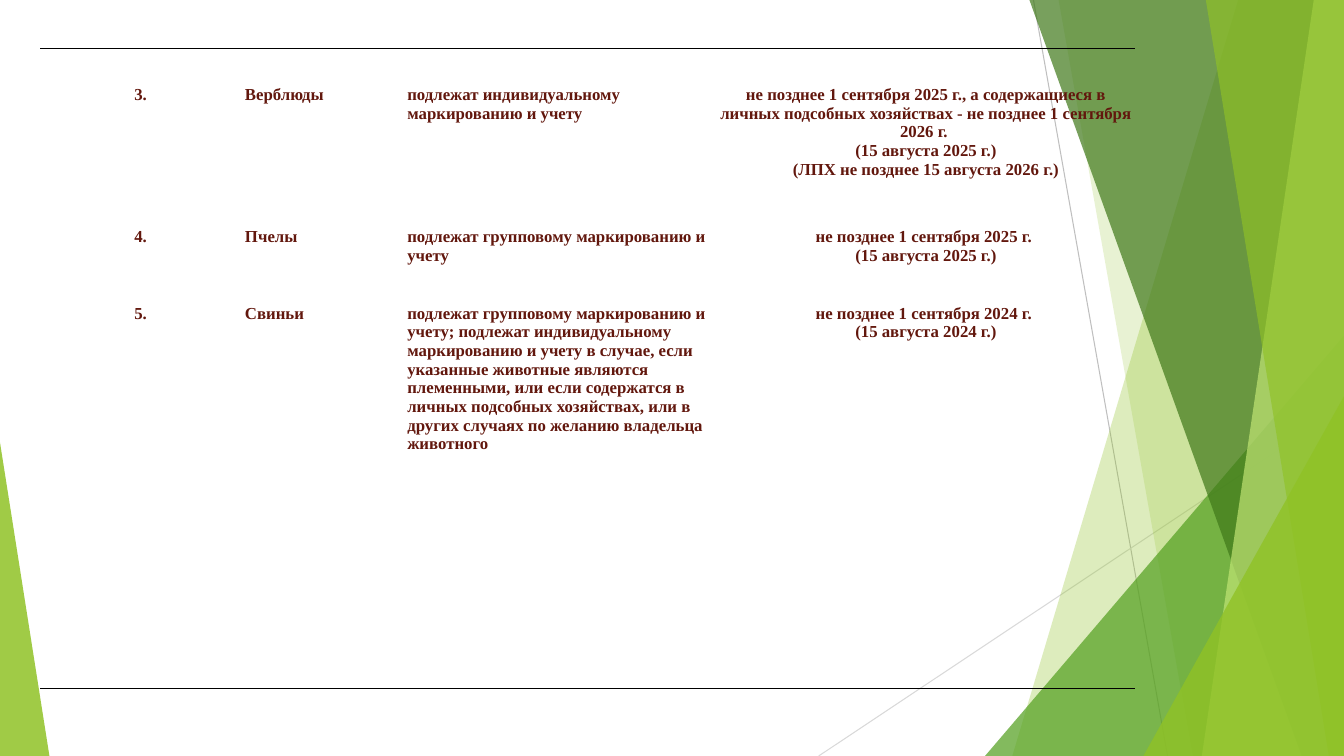
"""Builds the slide with deadlines for marking and registering animals."""
from lxml.etree import SubElement
from pptx import Presentation
from pptx.dml.color import RGBColor
from pptx.enum.shapes import MSO_CONNECTOR, MSO_SHAPE
from pptx.enum.text import PP_ALIGN
from pptx.oxml import parse_xml
from pptx.oxml.ns import nsdecls, qn
from pptx.util import Inches, Pt

WIDTH, HEIGHT = 13.33, 7.5
LIME = RGBColor(0x90, 0xC2, 0x26)
GREEN = RGBColor(0x54, 0xA0, 0x21)
FOREST = RGBColor(0x3F, 0x78, 0x19)
PALE_LIME = RGBColor(0xC0, 0xE4, 0x74)
GREY = RGBColor(0xBF, 0xBF, 0xBF)
LIGHT_GREY = RGBColor(0xD9, 0xD9, 0xD9)
MAROON = RGBColor(0x62, 0x17, 0x0D)
BLACK = RGBColor(0, 0, 0)

ANIMALS = [
    ("3. ", "Верблюды", "подлежат индивидуальному маркированию и учету",
     "не позднее 1 сентября 2025 г., а содержащиеся в личных подсобных "
     "хозяйствах - не позднее 1 сентября 2026 г. \n(15 августа 2025 г.)\n"
     "(ЛПХ не позднее 15 августа 2026 г.)"),
    ("4. ", "Пчелы", "подлежат групповому маркированию и учету",
     "не позднее 1 сентября 2025 г. \n(15 августа 2025 г.)"),
    ("5. ", "Свиньи",
     "подлежат групповому маркированию и учету; подлежат индивидуальному "
     "маркированию и учету в случае, если указанные животные являются "
     "племенными, или если содержатся в личных подсобных хозяйствах, или в "
     "других случаях по желанию владельца животного",
     "не позднее 1 сентября 2024 г. \n(15 августа 2024 г.)"),
]
COLUMNS = (2.03, 1.61, 3.07, 4.15)
ROWS = (1.78, 0.76, 3.81)
ALIGNMENTS = (PP_ALIGN.CENTER, PP_ALIGN.LEFT, PP_ALIGN.LEFT, PP_ALIGN.CENTER)
TABLE_LEFT, TABLE_TOP = 0.4, 0.48
FIRST_ROW_INSET = 0.37

RAYS = [((10.25, 0), (11.58, HEIGHT), GREY),
        ((WIDTH, 4.03), (8.12, HEIGHT), LIGHT_GREY)]
# Content order is back to front.
FACETS = [
    ("panel", 12.28, 10.04, LIME, 30),
    ("panel", 10.5, 11.83, LIME, 20),
    ("triangle", 9.77, 3.33, 3.56, 1, GREEN, 72),
    ("panel", 10.21, 12.91, FOREST, 70),
    ("panel", 13.03, 11.92, PALE_LIME, 70),
    ("panel", 11.96, 13.18, LIME, 65),
    ("triangle", 11.34, 3.93, 1.99, 1, LIME, 80),
    ("triangle", 0, 4.39, 0.49, 0, LIME, 85),
]


def add_ray(slide, start, end, color):
    ray = slide.shapes.add_connector(
        MSO_CONNECTOR.STRAIGHT, *(Inches(v) for v in start + end))
    ray.line.color.rgb = color
    ray.line.width = Pt(0.75)
    SubElement(ray._element.spPr, qn("a:effectLst"))


def add_panel(slide, top_x, bottom_x):
    corners = [(Inches(x), Inches(y)) for x, y in
               ((top_x, 0), (WIDTH, 0), (WIDTH, HEIGHT), (bottom_x, HEIGHT))]
    builder = slide.shapes.build_freeform(*corners[0])
    builder.add_line_segments(corners[1:], close=True)
    return builder.convert_to_shape()


def add_triangle(slide, left, top, width, apex):
    triangle = slide.shapes.add_shape(
        MSO_SHAPE.ISOSCELES_TRIANGLE, Inches(left), Inches(top),
        Inches(width), Inches(HEIGHT - top))
    triangle.adjustments[0] = apex
    return triangle


def tint(facet, color, opacity):
    facet.shadow.inherit = False
    facet.line.fill.background()
    facet.fill.solid()
    facet.fill.fore_color.rgb = color
    srgb = facet._element.spPr.find(qn("a:solidFill")).find(qn("a:srgbClr"))
    SubElement(srgb, qn("a:alpha"), val=str(opacity * 1000))


def set_borders(cell, ruled):
    properties = cell._tc.get_or_add_tcPr()
    for side in ("lnL", "lnR", "lnT", "lnB"):
        paint = (f'<a:solidFill><a:srgbClr val="{BLACK}"/></a:solidFill>'
                 if side in ruled else "<a:noFill/>")
        properties.append(parse_xml(
            f'<a:{side} {nsdecls("a")} w="{Pt(0.75)}">{paint}</a:{side}>'))


def write_cell(cell, text, *, align, inset_top=0, size=12, color=MAROON,
               font="Times New Roman", bold=True):
    cell.margin_left = cell.margin_right = cell.margin_bottom = 0
    cell.margin_top = Inches(inset_top)
    cell.text = text
    for paragraph in cell.text_frame.paragraphs:
        paragraph.alignment = align
        for run in paragraph.runs:
            run.font.name = font
            run.font.size = Pt(size)
            run.font.bold = bold
            run.font.color.rgb = color


def add_deadlines(slide):
    table = slide.shapes.add_table(
        len(ROWS), len(COLUMNS), Inches(TABLE_LEFT), Inches(TABLE_TOP),
        Inches(sum(COLUMNS)), Inches(sum(ROWS))).table
    table.first_row = table.horz_banding = False
    for column, width in zip(table.columns, COLUMNS):
        column.width = Inches(width)
    last = len(ROWS) - 1
    for r, (animal, height) in enumerate(zip(ANIMALS, ROWS)):
        table.rows[r].height = Inches(height)
        ruled = {0: ("lnT",), last: ("lnB",)}.get(r, ())
        for c, (text, align) in enumerate(zip(animal, ALIGNMENTS)):
            cell = table.cell(r, c)
            set_borders(cell, ruled)
            cell.fill.background()
            write_cell(cell, text, align=align,
                       inset_top=0 if r else FIRST_ROW_INSET)


def main():
    deck = Presentation()
    deck.slide_width, deck.slide_height = Inches(WIDTH), Inches(HEIGHT)
    slide = deck.slides.add_slide(deck.slide_layouts[6])
    for start, end, color in RAYS:
        add_ray(slide, start, end, color)
    builders = {"panel": add_panel, "triangle": add_triangle}
    for kind, *geometry, color, opacity in FACETS:
        tint(builders[kind](slide, *geometry), color, opacity)
    add_deadlines(slide)
    deck.save("out.pptx")


if __name__ == "__main__":
    main()
